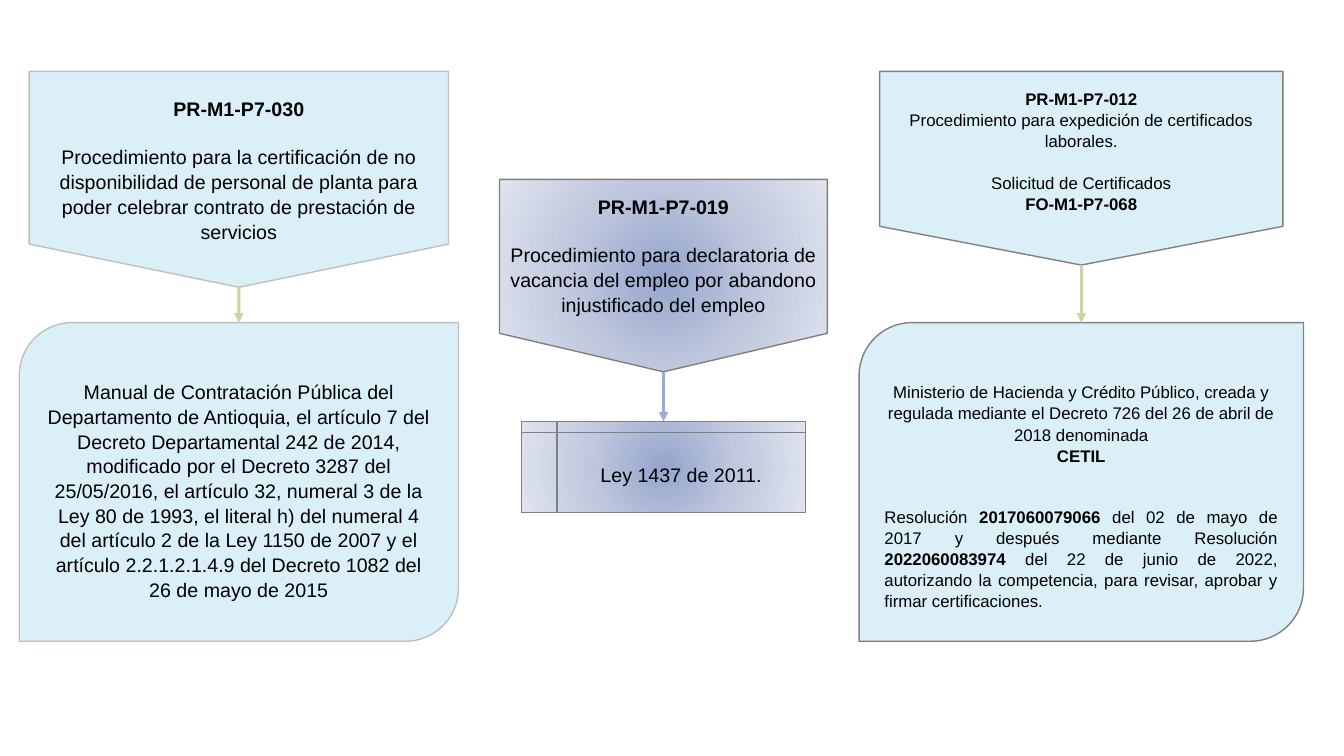
from dataclasses import dataclass

from pptx import Presentation
from pptx.dml.color import RGBColor
from pptx.enum.shapes import MSO_CONNECTOR as CONN, MSO_SHAPE as SHAPE
from pptx.enum.text import MSO_ANCHOR as ANCHOR, PP_ALIGN as ALIGN
from pptx.oxml import parse_xml
from pptx.oxml.ns import nsdecls
from pptx.util import Cm, Pt

FONT = "Arial"
COLORS = {
    "text": "000000", "sky": "DBEFF9", "light_line": "BFBFBF", "dark_line": "808080",
    "green": "C6D79F", "blue": "97ACD9",
    "core": "95A5CC", "middle": "C0C8DE", "rim": "E0E4EE",
}


@dataclass
class Run:
    text: str
    bold: bool = False


@dataclass
class Para:
    runs: list[Run]
    before: float = 0
    align: ALIGN = ALIGN.CENTER


@dataclass
class Box:
    shape: SHAPE
    top: float
    width: float
    height: float
    inset_top: float
    paras: list[Para]


@dataclass
class Column:
    """A procedure and the rule it rests on, stacked on one axis."""
    center: float
    size: int
    line: str
    arrow: str
    radial: bool
    procedure: Box
    rule: Box


COLUMNS = [
    Column(
        6.02, 14, "light_line", "green", False,
        Box(SHAPE.FLOWCHART_OFFPAGE_CONNECTOR, 1.8, 10.57, 5.44, 0.62, [
            Para([Run("PR-M1-P7-030", True)]),
            Para([Run("Procedimiento para la certificación de no disponibilidad de personal "
                      "de planta para poder celebrar contrato de prestación de servicios")], 16.8),
        ]),
        Box(SHAPE.ROUND_2_DIAG_RECTANGLE, 8.13, 11.07, 8.03, 1.03, [
            Para([Run("Manual de Contratación Pública del Departamento de Antioquia, el artículo 7 "
                      "del Decreto Departamental 242 de 2014, modificado por el Decreto 3287 del "
                      "25/05/2016, el artículo 32, numeral 3 de la Ley 80 de 1993, el literal h) "
                      "del numeral 4 del artículo 2 de la Ley 1150 de 2007 y el artículo "
                      "2.2.1.2.1.4.9 del Decreto 1082 del 26 de mayo de 2015")]),
        ]),
    ),
    Column(
        16.72, 14, "dark_line", "blue", True,
        Box(SHAPE.FLOWCHART_OFFPAGE_CONNECTOR, 4.52, 8.26, 4.85, 0.37, [
            Para([Run("PR-M1-P7-019", True)]),
            Para([Run("Procedimiento para declaratoria de vacancia del empleo por abandono "
                      "injustificado del empleo")], 16.8),
        ]),
        Box(SHAPE.FLOWCHART_INTERNAL_STORAGE, 10.62, 7.16, 2.29, 0.72, [
            Para([Run("Ley 1437 de 2011.")]),
        ]),
    ),
    Column(
        27.25, 12, "dark_line", "green", False,
        Box(SHAPE.FLOWCHART_OFFPAGE_CONNECTOR, 1.8, 10.16, 4.88, 0.41, [
            Para([Run("PR-M1-P7-012", True)]),
            Para([Run("Procedimiento para expedición de certificados laborales.")]),
            Para([Run("Solicitud de Certificados")], 14.4),
            Para([Run("FO-M1-P7-068", True)]),
        ]),
        Box(SHAPE.ROUND_2_DIAG_RECTANGLE, 8.13, 11.2, 8.03, 1.08, [
            Para([Run("Ministerio de Hacienda y Crédito Público, creada y regulada mediante el "
                      "Decreto 726 del 26 de abril de 2018 denominada")]),
            Para([Run("CETIL", True)]),
            Para([Run("Resolución "), Run("2017060079066", True),
                  Run(" del 02 de mayo de 2017 y después mediante Resolución "),
                  Run("2022060083974", True),
                  Run(" del 22 de junio de 2022, autorizando la competencia, para revisar, "
                      "aprobar y firmar certificaciones.")], 28.4, ALIGN.JUSTIFY),
        ]),
    ),
]


def rgb(name: str) -> RGBColor:
    return RGBColor.from_string(COLORS[name])


def fill_radial(sp) -> None:
    """Fill with a circular gradient that spreads from the centre."""
    stops = "".join(
        f'<a:gs pos="{pos}"><a:srgbClr val="{COLORS[name]}"/></a:gs>'
        for pos, name in ((0, "core"), (50000, "middle"), (100000, "rim")))
    gradient = parse_xml(
        f'<a:gradFill {nsdecls("a")} rotWithShape="1"><a:gsLst>{stops}</a:gsLst>'
        '<a:path path="circle"><a:fillToRect l="50000" t="50000" r="50000" b="50000"/>'
        '</a:path></a:gradFill>')
    sp.fill.background()
    sp_pr = sp._element.spPr
    sp_pr.replace(sp_pr.find("a:noFill", {"a": gradient.nsmap["a"]}), gradient)


def add_text(sp, box: Box, size: int) -> None:
    tf = sp.text_frame
    tf.word_wrap = True
    tf.vertical_anchor = ANCHOR.TOP
    tf.margin_left = tf.margin_right = Cm(0.25)
    tf.margin_top, tf.margin_bottom = Cm(box.inset_top), Cm(0)
    for i, para in enumerate(box.paras):
        p = tf.add_paragraph() if i else tf.paragraphs[0]
        p.alignment = para.align
        p.line_spacing = 1.05
        p.space_before = Pt(para.before)
        for run in para.runs:
            r = p.add_run()
            r.text = run.text
            r.font.name, r.font.size, r.font.bold = FONT, Pt(size), run.bold
            r.font.color.rgb = rgb("text")


def add_box(shapes, box: Box, column: Column):
    sp = shapes.add_shape(box.shape, Cm(column.center - box.width / 2), Cm(box.top),
                          Cm(box.width), Cm(box.height))
    sp.shadow.inherit = False
    if column.radial:
        fill_radial(sp)
    else:
        sp.fill.solid()
        sp.fill.fore_color.rgb = rgb("sky")
    sp.line.color.rgb = rgb(column.line)
    sp.line.width = Pt(1)
    add_text(sp, box, column.size)
    return sp


def add_arrow(shapes, column: Column, procedure, rule) -> None:
    x = Cm(column.center)
    arrow = shapes.add_connector(CONN.STRAIGHT, x, procedure.top + procedure.height, x, rule.top)
    arrow.begin_connect(procedure, 2)
    if column.rule.shape == SHAPE.FLOWCHART_INTERNAL_STORAGE:
        arrow.end_connect(rule, 0)
    arrow.line.color.rgb = rgb(column.arrow)
    arrow.line.width = Pt(2.25)
    arrow.line._get_or_add_ln().append(parse_xml(f'<a:tailEnd {nsdecls("a")} type="triangle"/>'))
    arrow._element.spPr.append(parse_xml(f'<a:effectLst {nsdecls("a")}/>'))


def main() -> None:
    prs = Presentation()
    prs.slide_width, prs.slide_height = Cm(33.87), Cm(19.05)
    shapes = prs.slides.add_slide(prs.slide_layouts[6]).shapes
    for column in COLUMNS:
        procedure = add_box(shapes, column.procedure, column)
        rule = add_box(shapes, column.rule, column)
        add_arrow(shapes, column, procedure, rule)
    prs.save("out.pptx")


if __name__ == "__main__":
    main()
